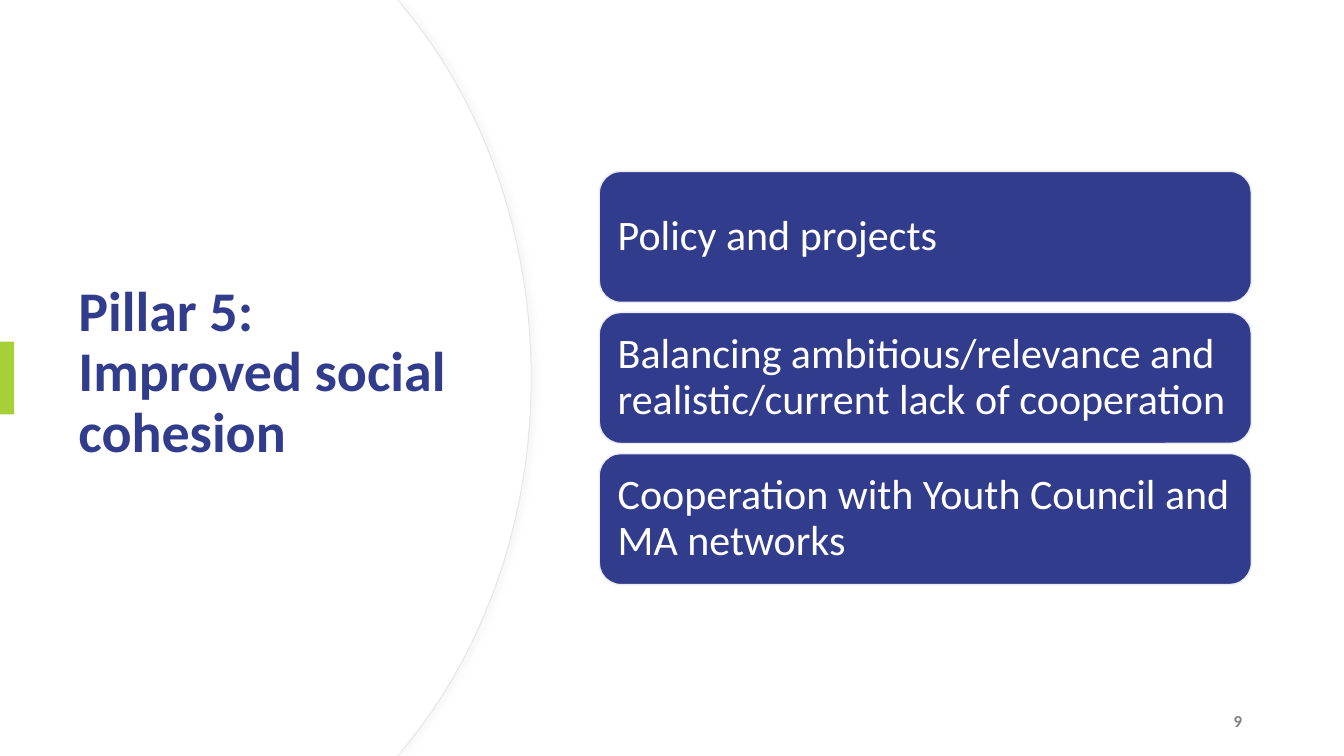
from typing import NamedTuple

from lxml import etree
from pptx import Presentation
from pptx.dml.color import RGBColor
from pptx.enum.shapes import MSO_SHAPE
from pptx.enum.text import MSO_ANCHOR, PP_ALIGN
from pptx.oxml.ns import qn
from pptx.util import Inches, Pt

RECTANGLE = MSO_SHAPE.RECTANGLE
ROUNDED = MSO_SHAPE.ROUNDED_RECTANGLE
MIDDLE = MSO_ANCHOR.MIDDLE
LEFT, RIGHT = PP_ALIGN.LEFT, PP_ALIGN.RIGHT

# The slide is a grid of square cells, 0.1 inch each.
COLUMNS, ROWS = 133.33, 75
FONT = "Calibri"
BLUE, GREEN, WHITE, GREY = "323C8C", "A6CF38", "FFFFFF", "808080"
PANEL_EDGE, PANEL_SHADOW, CARD_EDGE = "E6E6E6", "D9D9D9", "EAEBF3"


class Area(NamedTuple):
    column: float
    row: float
    columns: float
    rows: float


class TextStyle(NamedTuple):
    size: float
    color: str
    bold: bool = False
    align: int = LEFT
    line_spacing: float = 0.9
    margin: float = 1


TITLE_STYLE = TextStyle(40, BLUE, bold=True)
CARD_STYLE = TextStyle(30, WHITE, margin=1.2)
NUMBER_STYLE = TextStyle(12, GREY, bold=True, align=RIGHT, line_spacing=1)

CARDS = [
    "Policy and projects",
    "Balancing ambitious/relevance and realistic/current lack of cooperation",
    "Cooperation with Youth Council and MA networks",
]
FIRST_CARD = Area(59.45, 17, 64.7, 13)
CARD_PITCH = 14


def cells(count: float) -> int:
    return Inches(count / 10)


def place(area: Area) -> list[int]:
    return [cells(value) for value in area]


def rgb(color: str) -> RGBColor:
    return RGBColor.from_string(color)


def paint(shape, fill: str, edge: str | None = None, width: float = 1) -> None:
    shape.shadow.inherit = False
    shape.fill.solid()
    shape.fill.fore_color.rgb = rgb(fill)
    if edge is None:
        shape.line.fill.background()
    else:
        shape.line.color.rgb = rgb(edge)
        shape.line.width = Pt(width)


def write(shape, text: str, style: TextStyle) -> None:
    frame = shape.text_frame
    frame.word_wrap = True
    frame.vertical_anchor = MIDDLE
    frame.margin_left = frame.margin_right = cells(style.margin)
    frame.margin_top = frame.margin_bottom = cells(style.margin / 2)
    frame.text = text
    para = frame.paragraphs[0]
    para.alignment = style.align
    para.line_spacing = style.line_spacing
    font = para.runs[0].font
    font.name = FONT
    font.size = Pt(style.size)
    font.bold = style.bold
    font.color.rgb = rgb(style.color)


def add_text(page, area: Area, text: str, style: TextStyle) -> None:
    write(page.shapes.add_textbox(*place(area)), text, style)


def bend(segment, controls: list[tuple[float, float]]) -> None:
    """Turn a straight path segment into a cubic curve."""
    segment.tag = qn("a:cubicBezTo")
    for index, (column, row) in enumerate(controls):
        point = etree.Element(qn("a:pt"), x=str(cells(column)), y=str(cells(row)))
        segment.insert(index, point)


def add_panel(page, right: float):
    """Add the left panel, whose bulging side reaches the given column."""
    shoulder = right - 12.6
    outline = [(39.4, 0), (shoulder, 0.8), (right, ROWS / 2),
               (shoulder, ROWS - 0.8), (39.4, ROWS), (0, ROWS)]
    builder = page.shapes.build_freeform(0, 0, scale=1.0)
    builder.add_line_segments(
        [(cells(column), cells(row)) for column, row in outline], close=True)
    panel = builder.convert_to_shape()
    segments = list(panel._element.iter(qn("a:lnTo")))
    upper = [(right - 4.8, 10.2), (right, 23.2)]
    lower = [(column, ROWS - row) for column, row in reversed(upper)]
    for segment, controls in zip(segments[2:4], (upper, lower)):
        bend(segment, controls)
    return panel


def add_soft_shadow(shape, color: str) -> None:
    effects = shape._element.spPr.find(qn("a:effectLst"))
    shadow = etree.SubElement(
        effects, qn("a:outerShdw"), blurRad=str(Pt(4)), dist=str(Pt(3)),
        dir="0", algn="l", rotWithShape="0")
    tint = etree.SubElement(shadow, qn("a:srgbClr"), val=color)
    etree.SubElement(tint, qn("a:alpha"), val="20000")


def main() -> None:
    deck = Presentation()
    deck.slide_width, deck.slide_height = cells(COLUMNS), cells(ROWS)
    page = deck.slides.add_slide(deck.slide_layouts[6])
    page.background.fill.solid()
    page.background.fill.fore_color.rgb = rgb(WHITE)

    edged_panel = add_panel(page, 52.7)
    paint(edged_panel, WHITE, PANEL_EDGE, 0.75)
    add_soft_shadow(edged_panel, PANEL_SHADOW)
    paint(add_panel(page, 52.6), WHITE)

    add_text(page, Area(6.8, 12.3, 39.4, 49.5),
             "Pillar 5: Improved social cohesion", TITLE_STYLE)
    accent = page.shapes.add_shape(RECTANGLE, *place(Area(0, 33.9, 1.4, 7.2)))
    paint(accent, GREEN)

    for index, text in enumerate(CARDS):
        area = FIRST_CARD._replace(row=FIRST_CARD.row + index * CARD_PITCH)
        card = page.shapes.add_shape(ROUNDED, *place(area))
        paint(card, BLUE, CARD_EDGE)
        write(card, text, CARD_STYLE)

    add_text(page, Area(113.2, 69.5, 11, 4), "9", NUMBER_STYLE)
    deck.save("out.pptx")


if __name__ == "__main__":
    main()
